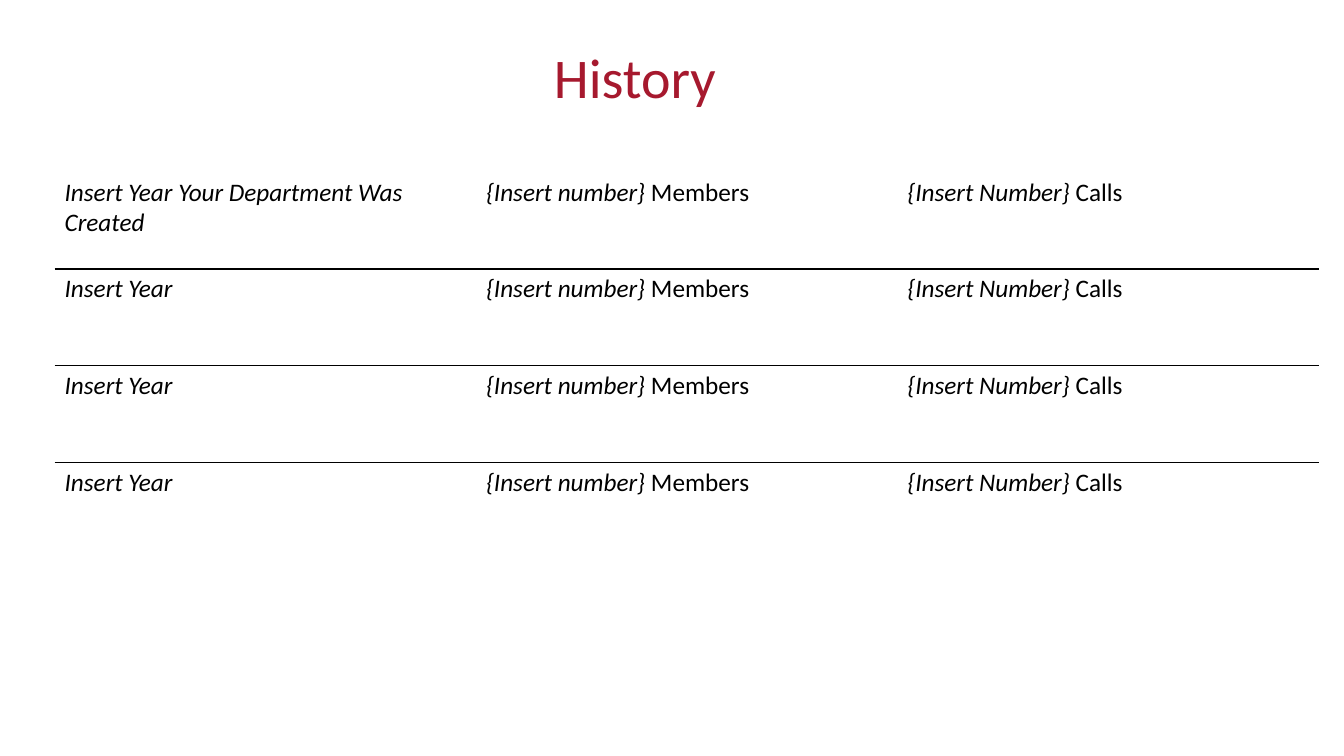
import dataclasses

import pptx
import pptx.dml.color
import pptx.enum.text
import pptx.oxml
import pptx.oxml.ns
import pptx.slide
import pptx.table
import pptx.text.text
import pptx.util

Pt = pptx.util.Pt
FONT = "Calibri"
BLACK = "000000"
CRIMSON = "A6192E"
NO_STYLE = "{2D5ABB26-0587-4C30-8999-92F81FD0307C}"
COL_WIDTH = 301
ROW_HEIGHT = 69.12


@dataclasses.dataclass
class HistoryRow:
    year: str = "Insert Year"
    members: str = "{Insert number} "
    calls: str = "{Insert Number} "


def rgb(value: str) -> pptx.dml.color.RGBColor:
    return pptx.dml.color.RGBColor.from_string(value)


def add_text(p: pptx.text.text._Paragraph, text: str, *, size: float = 18,
             color: str = BLACK, italic: bool = False) -> None:
    r = p.add_run()
    r.text = text
    r.font.name = FONT
    r.font.size = Pt(size)
    r.font.italic = italic
    r.font.color.rgb = rgb(color)


def add_border(cell: pptx.table._Cell, side: str, color: str = BLACK, width: float = 1) -> None:
    ns = pptx.oxml.ns.nsdecls("a")
    cell._tc.get_or_add_tcPr().append(pptx.oxml.parse_xml(
        f'<a:{side} {ns} w="{Pt(width)}"><a:solidFill><a:srgbClr val="{color}"/>'
        f'</a:solidFill></a:{side}>'))


def add_title(slide: pptx.slide.Slide, text: str) -> None:
    sp = slide.shapes.title
    sp.left, sp.top, sp.width, sp.height = Pt(106), Pt(0), Pt(695), Pt(108.5)
    tf = sp.text_frame
    tf.vertical_anchor = pptx.enum.text.MSO_ANCHOR.MIDDLE
    p = tf.paragraphs[0]
    p.alignment = pptx.enum.text.PP_ALIGN.CENTER
    add_text(p, text, size=40, color=CRIMSON)


def add_history(slide: pptx.slide.Slide, rows: list[HistoryRow]) -> None:
    frame = slide.shapes.add_table(len(rows), 3, Pt(39), Pt(123),
                                   Pt(3 * COL_WIDTH), Pt(len(rows) * ROW_HEIGHT))
    table = frame.table
    table.first_row = table.horz_banding = False
    table._tbl.tblPr.find(pptx.oxml.ns.qn("a:tableStyleId")).text = NO_STYLE
    for column in table.columns:
        column.width = Pt(COL_WIDTH)
    for i, row in enumerate(rows):
        table.rows[i].height = Pt(ROW_HEIGHT)
        texts = [(row.year, ""), (row.members, "Members"), (row.calls, "Calls")]
        for j, (prompt, label) in enumerate(texts):
            cell = table.cell(i, j)
            if i > 0:
                add_border(cell, "lnT")
            if i < len(rows) - 1:
                add_border(cell, "lnB")
            cell.fill.background()
            p = cell.text_frame.paragraphs[0]
            add_text(p, prompt, italic=True)
            if label:
                add_text(p, label)


def main() -> None:
    prs = pptx.Presentation()
    prs.slide_width, prs.slide_height = Pt(960), Pt(540)
    slide = prs.slides.add_slide(prs.slide_layouts[5])
    add_title(slide, "History")
    add_history(slide, [HistoryRow("Insert Year Your Department Was Created"),
                        HistoryRow(), HistoryRow(), HistoryRow()])
    prs.save("out.pptx")


if __name__ == "__main__":
    main()
